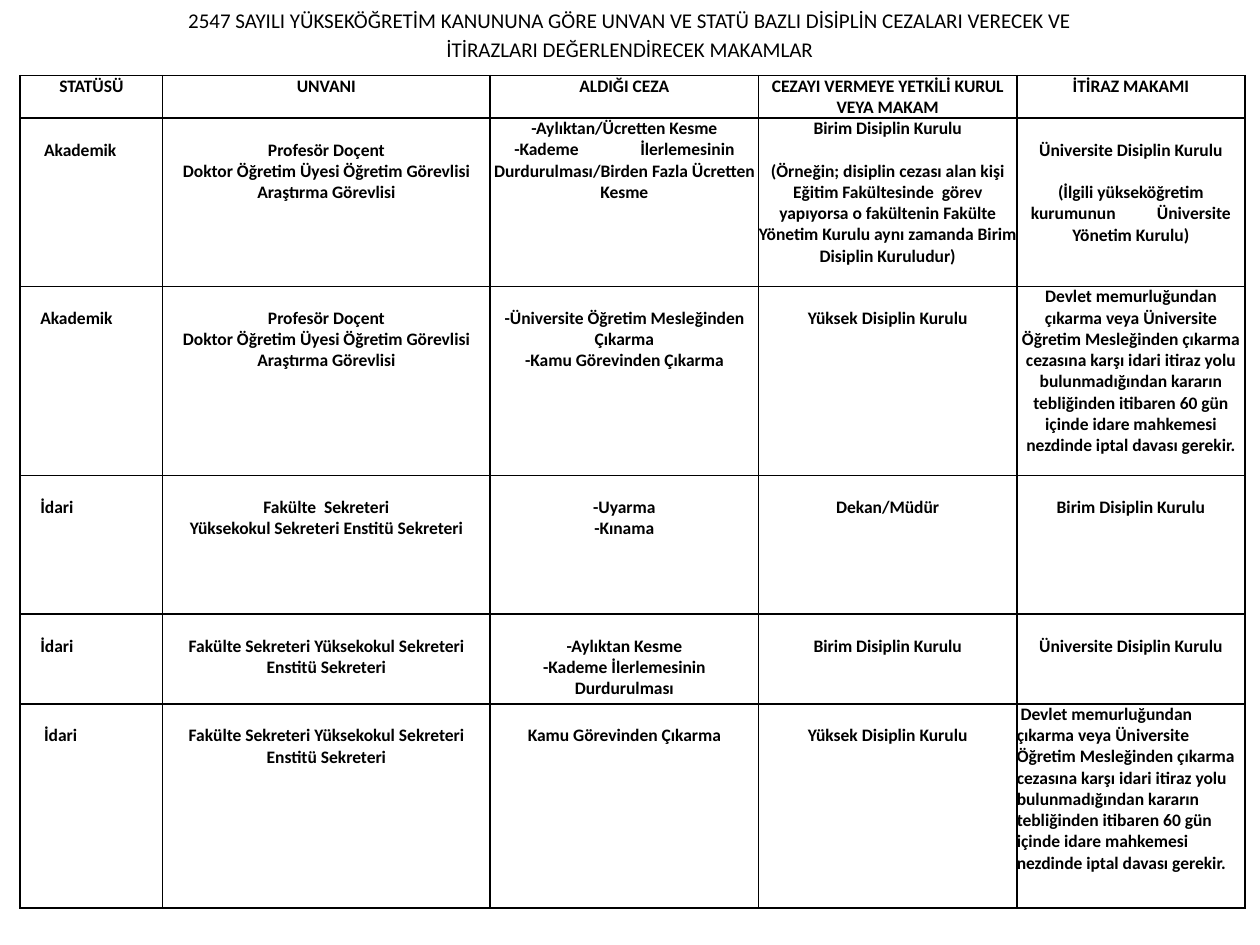
"""Build a one-slide table of disciplinary penalties and the bodies that decide them."""
from lxml import etree
from pptx import Presentation
from pptx.dml.color import RGBColor
from pptx.enum.text import MSO_ANCHOR, MSO_AUTO_SIZE, PP_ALIGN
from pptx.oxml.ns import qn
from pptx.util import Inches, Pt

LEFT, MID = PP_ALIGN.LEFT, PP_ALIGN.CENTER
TOP, FIXED = MSO_ANCHOR.TOP, MSO_AUTO_SIZE.NONE
HUES = {"ink": "000000", "paper": "FFFFFF"}
FONT = "Calibri"
LINE = 12.2

TITLE = ("2547 SAYILI YÜKSEKÖĞRETİM KANUNUNA GÖRE UNVAN VE STATÜ BAZLI DİSİPLİN CEZALARI VERECEK VE\n"
         "İTİRAZLARI DEĞERLENDİRECEK MAKAMLAR")
STAFF = "\nProfesör Doçent\nDoktor Öğretim Üyesi Öğretim Görevlisi\nAraştırma Görevlisi"
UNIT = "Birim Disiplin Kurulu"
HIGH = "\nYüksek Disiplin Kurulu"
UNI = "\nÜniversite Disiplin Kurulu"
COURT = ("Devlet memurluğundan çıkarma veya Üniversite Öğretim Mesleğinden çıkarma cezasına karşı "
         "idari itiraz yolu bulunmadığından kararın tebliğinden itibaren 60 gün içinde idare "
         "mahkemesi nezdinde iptal davası gerekir.")
ROWS = [
    ["STATÜSÜ", "UNVANI", "ALDIĞI CEZA", "CEZAYI VERMEYE YETKİLİ KURUL VEYA MAKAM", "İTİRAZ MAKAMI"],
    ["\nAkademik", STAFF,
     "-Aylıktan/Ücretten Kesme\n-Kademe\tİlerlemesinin Durdurulması/Birden Fazla Ücretten Kesme",
     UNIT + "\n\n(Örneğin; disiplin cezası alan kişi Eğitim Fakültesinde  görev yapıyorsa o fakültenin "
     "Fakülte Yönetim Kurulu aynı zamanda Birim Disiplin Kuruludur)",
     UNI + "\n\n(İlgili yükseköğretim kurumunun\tÜniversite Yönetim Kurulu)"],
    ["\nAkademik", STAFF, "\n-Üniversite Öğretim Mesleğinden Çıkarma\n-Kamu Görevinden Çıkarma", HIGH, COURT],
    ["\nİdari", "\nFakülte  Sekreteri\nYüksekokul Sekreteri Enstitü Sekreteri",
     "\n-Uyarma\n-Kınama", "\nDekan/Müdür", "\n" + UNIT],
    ["\nİdari", "\nFakülte Sekreteri Yüksekokul Sekreteri\nEnstitü Sekreteri",
     "\n-Aylıktan Kesme\n-Kademe İlerlemesinin\nDurdurulması", "\n" + UNIT, UNI],
    ["\nİdari", "\nFakülte Sekreteri Yüksekokul Sekreteri Enstitü Sekreteri",
     "\nKamu Görevinden Çıkarma", HIGH, COURT],
]
COLS = [11.3, 26, 21.3, 20.5, 18.1]
HIGHS = [4.4, 17.8, 20, 14.7, 9.5, 21.6]
INSETS = {1: 0.19, 2: 0.16, 3: 0.16, 4: 0.16, 5: 0.19}


def write(frame, text, size=10, bold=True, align=MID, before=0, indent=0):
    """Fill a frame with one paragraph a line; a blank line adds a line of space above the next."""
    gap, fresh = 0, True
    for line in text.split("\n"):
        if not line:
            gap = LINE
            continue
        para = frame.paragraphs[0] if fresh else frame.add_paragraph()
        para.alignment = align
        para.space_before = Pt(before + gap)
        if indent:
            para._p.get_or_add_pPr().set("indent", str(Inches(indent)))
        run = para.add_run()
        run.text = line
        font = run.font
        font.name, font.size, font.bold = FONT, Pt(size), bold
        font.color.rgb = RGBColor.from_string(HUES["ink"])
        gap, fresh = 0, False


class Page:
    """Holds the deck and its slide, and places elements in percent of the slide."""

    def __init__(self):
        """Open a slide with a title on a plain background."""
        self.deck = Presentation()
        self.deck.slide_width, self.deck.slide_height = Inches(10), Inches(7.5)
        self.slide = self.deck.slides.add_slide(self.deck.slide_layouts[5])
        fill = self.slide.background.fill
        fill.solid()
        fill.fore_color.rgb = RGBColor.from_string(HUES["paper"])

    def wide(self, share):
        """Turn a percent of the slide width into a length."""
        return round(self.deck.slide_width * share / 100)

    def high(self, share):
        """Turn a percent of the slide height into a length."""
        return round(self.deck.slide_height * share / 100)

    def title(self, text, x, y, w, h):
        """Move the title placeholder and fill it."""
        box = self.slide.shapes.title
        box.left, box.top = self.wide(x), self.high(y)
        box.width, box.height = self.wide(w), self.high(h)
        frame = box.text_frame
        frame.word_wrap, frame.auto_size, frame.vertical_anchor = True, FIXED, TOP
        write(frame, text, size=12, bold=False, before=2.4)

    def edge(self, cell):
        """Draw a thin line on every side of a cell."""
        props = cell._tc.get_or_add_tcPr()
        for spot, side in enumerate(("lnL", "lnR", "lnT", "lnB")):
            line = etree.Element(qn("a:" + side), w=str(Pt(1)))
            fill = etree.SubElement(line, qn("a:solidFill"))
            etree.SubElement(fill, qn("a:srgbClr"), val=HUES["ink"])
            props.insert(spot, line)

    def cell(self, cell, text, inset=0, **form):
        """Format one cell and write its text."""
        cell.margin_left = Inches(inset)
        cell.margin_right = cell.margin_bottom = 0
        cell.margin_top = Pt(LINE) if text.startswith("\n") else 0
        cell.vertical_anchor = TOP
        cell.fill.background()
        self.edge(cell)
        write(cell.text_frame, text.lstrip("\n"), **form)

    def grid(self, rows, x, y, cols, highs):
        """Add the table of statuses, penalties and bodies."""
        table = self.slide.shapes.add_table(
            len(rows), len(cols), self.wide(x), self.high(y),
            self.wide(sum(cols)), self.high(sum(highs))).table
        table.first_row = table.horz_banding = False
        for col, share in zip(table.columns, cols):
            col.width = self.wide(share)
        for row, share in zip(table.rows, highs):
            row.height = self.high(share)
        last = len(rows) - 1, len(cols) - 1
        for r, row in enumerate(rows):
            for c, text in enumerate(row):
                form = {}
                if c == 0 and r:
                    form = {"inset": INSETS[r], "align": LEFT}
                elif (r, c) == last:
                    form = {"indent": 0.03, "align": LEFT}
                self.cell(table.cell(r, c), text, **form)


def main():
    """Build the slide and save it."""
    page = Page()
    page.title(TITLE, 1.2, 0.13, 97.6, 7.33)
    page.grid(ROWS, 1.6, 8, COLS, HIGHS)
    page.deck.save("out.pptx")


if __name__ == "__main__":
    main()
